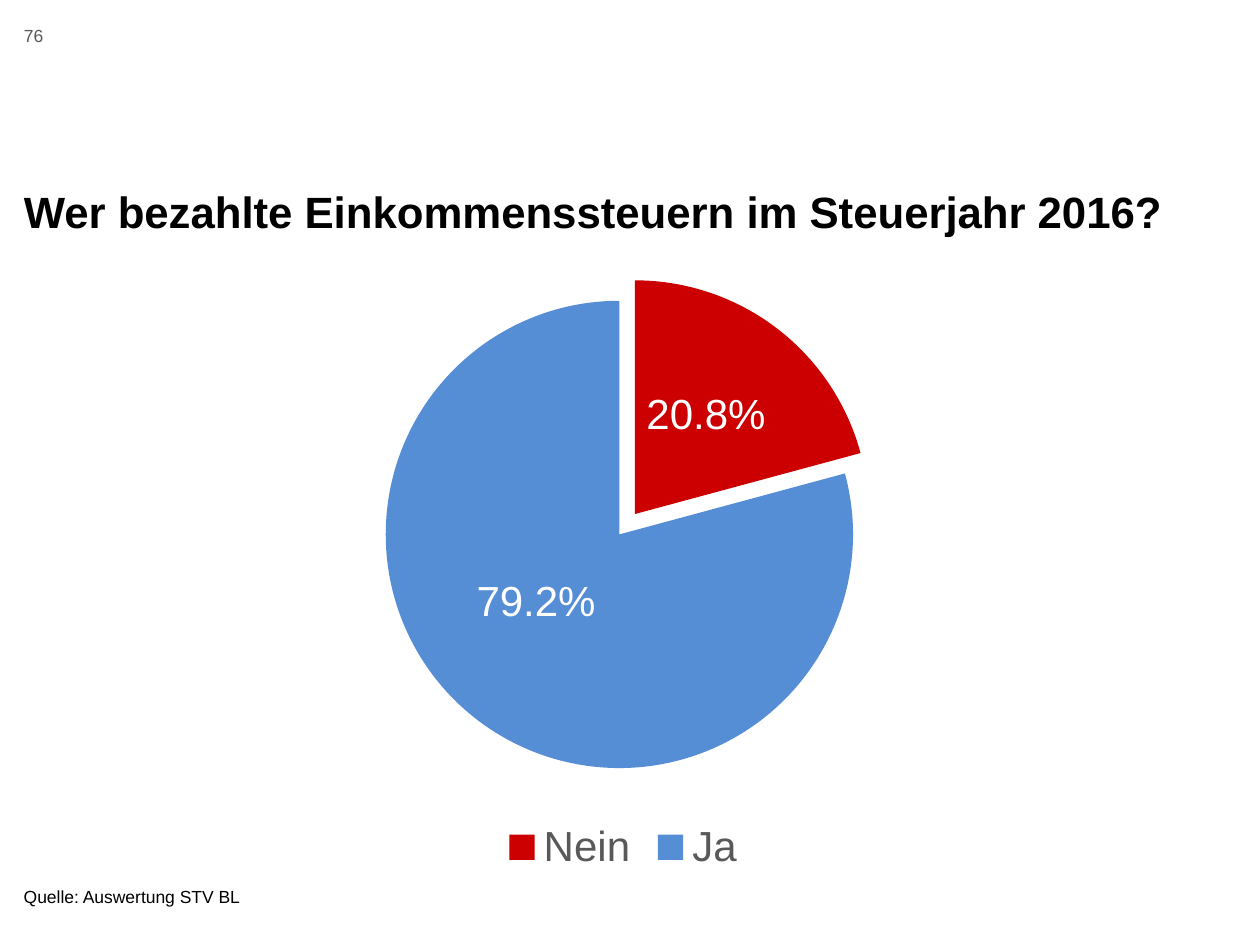
from dataclasses import dataclass

from lxml import etree
from pptx import Presentation
from pptx.chart import data as chart_data
from pptx.dml import color
from pptx.enum import chart as chart_enum, text
from pptx.oxml import ns
from pptx.util import Inches, Pt


@dataclass(frozen=True)
class Theme:
    """Colours and type sizes of the slide."""
    font: str = "Arial"
    black: str = "000000"
    grey: str = "555959"
    legend: str = "595959"
    white: str = "FFFFFF"
    no: str = "CC0000"
    yes: str = "558ED5"
    title_size: int = 25
    chart_size: int = 24
    small_size: int = 10


THEME = Theme()


def set_attributes(target, values):
    """Set each named attribute on the target."""
    for name, value in values.items():
        setattr(target, name, value)


def style_font(font, size, rgb, bold=False):
    """Apply the theme typeface with a size and colour."""
    set_attributes(font, {"name": THEME.font, "size": Pt(size), "bold": bold})
    font.color.rgb = color.RGBColor.from_string(rgb)


def add_text(slide, box, wording, size, rgb, bold=False, line_spacing=None, **frame_values):
    """Add a one-paragraph text box."""
    shape = slide.shapes.add_textbox(*map(Inches, box))
    set_attributes(shape.text_frame, {"word_wrap": True, **frame_values})
    paragraph = shape.text_frame.paragraphs[0]
    paragraph.line_spacing = line_spacing
    run = paragraph.add_run()
    run.text = wording
    style_font(run.font, size, rgb, bold)


def make_layout(**values):
    """Build a manual chart layout element."""
    layout = etree.Element(ns.qn("c:layout"))
    manual = etree.SubElement(layout, ns.qn("c:manualLayout"))
    for name, value in values.items():
        etree.SubElement(manual, ns.qn(f"c:{name}"), val=str(value))
    return layout


def place_plot(chart):
    """Fix the pie's place inside the chart."""
    plot_area = chart._chartSpace.chart.plotArea
    for layout in plot_area.findall(ns.qn("c:layout")):
        plot_area.remove(layout)
    plot_area.insert(0, make_layout(layoutTarget="inner", xMode="edge", yMode="edge",
                                    x=0.306, y=0.074, w=0.382, h=0.748))


def explode(series, index, percent):
    """Pull one slice out of the pie."""
    for point in series._element.findall(ns.qn("c:dPt")):
        if point.find(ns.qn("c:idx")).get("val") == str(index):
            explosion = etree.Element(ns.qn("c:explosion"), val=str(percent))
            point.find(ns.qn("c:spPr")).addprevious(explosion)


def add_pie(slide, box, slices):
    """Add a pie chart from (category, share, colour, label offset) rows."""
    source = chart_data.CategoryChartData(number_format="0.0%")
    source.categories = [row[0] for row in slices]
    source.add_series("Series 1", [row[1] for row in slices])
    chart = slide.shapes.add_chart(
        chart_enum.XL_CHART_TYPE.PIE, *map(Inches, box), source).chart
    set_attributes(chart, {"has_title": False, "has_legend": True})
    style_font(chart.font, THEME.small_size, THEME.black)
    set_attributes(chart.legend, {"position": chart_enum.XL_LEGEND_POSITION.BOTTOM,
                                  "include_in_layout": False})
    style_font(chart.legend.font, THEME.chart_size, THEME.legend)

    series = chart.plots[0].series[0]
    set_attributes(series.data_labels, {"show_value": True, "show_percentage": False,
                                        "number_format": "0.0%",
                                        "number_format_is_linked": False})
    style_font(series.data_labels.font, THEME.chart_size, THEME.white)
    for index, (_, _, rgb, (x, y)) in enumerate(slices):
        point = series.points[index]
        point.format.fill.solid()
        point.format.fill.fore_color.rgb = color.RGBColor.from_string(rgb)
        style_font(point.data_label.font, THEME.chart_size, THEME.white)
        point.data_label.position = chart_enum.XL_LABEL_POSITION.CENTER
        label = series._element.findall(".//" + ns.qn("c:dLbl"))[index]
        label.find(ns.qn("c:idx")).addnext(make_layout(x=x, y=y))
    explode(series, 0, 11)
    place_plot(chart)


def main():
    """Build and save the slide."""
    presentation = Presentation()
    set_attributes(presentation, {"slide_width": Inches(10), "slide_height": Inches(7.5)})
    slide = presentation.slides.add_slide(presentation.slide_layouts[6])
    flush = dict.fromkeys(("margin_left", "margin_top", "margin_right", "margin_bottom"), 0)

    add_text(slide, (0.19, 1.06, 9.61, 0.81),
             "Wer bezahlte Einkommenssteuern im Steuerjahr 2016?",
             THEME.title_size, THEME.black, bold=True, line_spacing=0.7,
             vertical_anchor=text.MSO_ANCHOR.BOTTOM, **flush)
    add_text(slide, (0.09, 6.98, 2.04, 0.27), "Quelle: Auswertung STV BL",
             THEME.small_size, THEME.black)
    add_text(slide, (0.19, 0.2, 0.44, 0.4), "76", THEME.small_size, THEME.grey, **flush)
    add_pie(slide, (0.09, 2.02, 9.71, 4.96),
            [("Nein", 0.208, THEME.no, (0, -0.01)),
             ("Ja", 0.792, THEME.yes, (-0.01, -0.04))])
    presentation.save("out.pptx")


if __name__ == "__main__":
    main()
